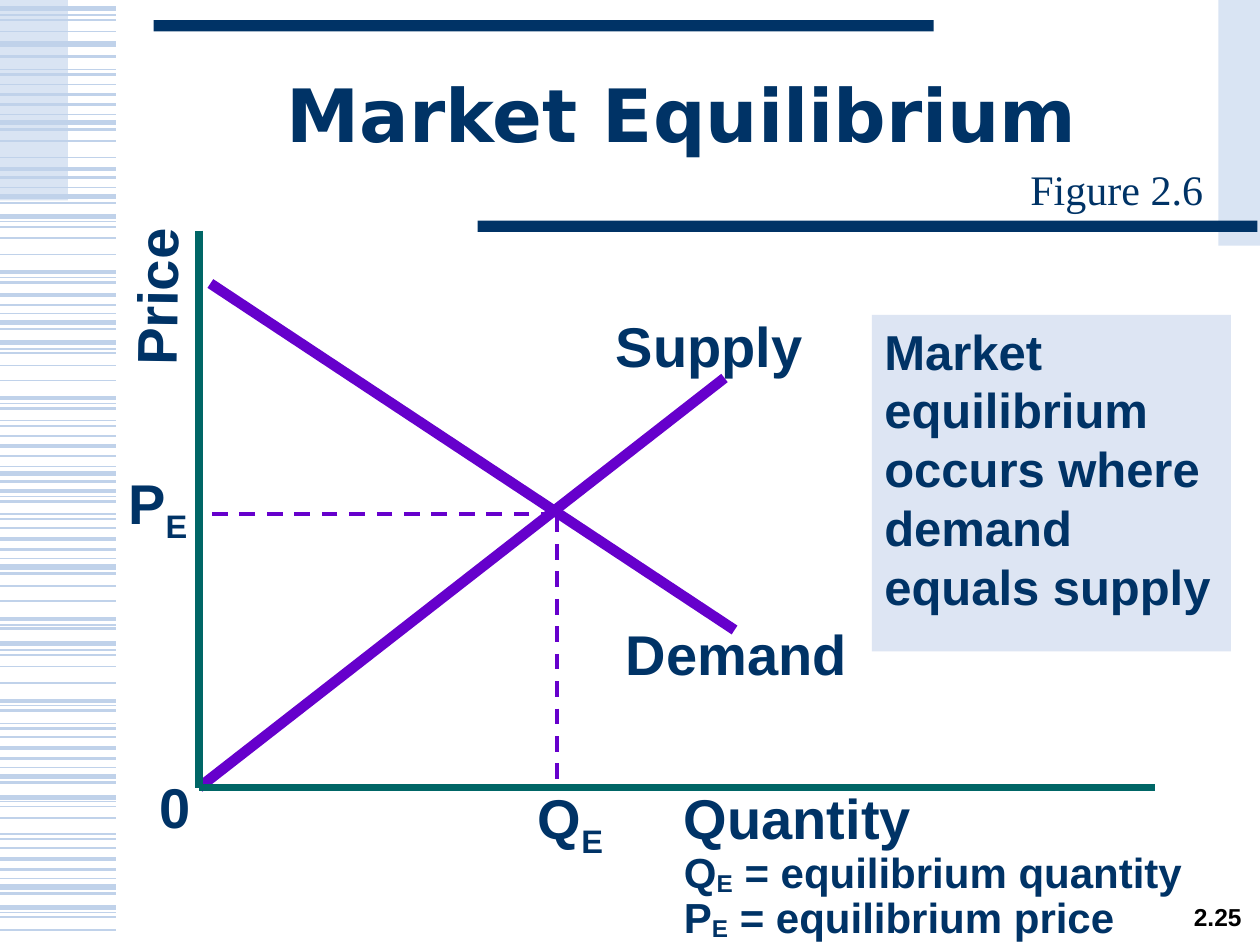
from pptx import Presentation
from pptx.dml.color import RGBColor
from pptx.enum.dml import MSO_LINE
from pptx.enum.shapes import MSO_CONNECTOR, MSO_SHAPE
from pptx.enum.text import MSO_ANCHOR, PP_ALIGN
from pptx.oxml.ns import qn
from pptx.util import Emu, Pt
from lxml.etree import SubElement

PX = 9144  # 100 px to the inch
COLORS = {
    "navy": "003366", "pale": "D9E4F3", "stripe": "C0D2EA", "note": "DDE5F3",
    "curve": "6600CC", "axis": "006666", "black": "000000",
}

BLOCKS = [  # left, top, width, height, colour
    (0, 0, 54, 159, "pale"),
    (122, 16, 619, 9, "navy"),
    (967, 0, 33, 195, "pale"),
    (379, 175, 619, 9, "navy"),
]

STRIPE_LENGTH = 92
STRIPES = {  # line width in points: heights on the slide
    0.75: [12, 55, 91, 149, 176, 220, 249, 277, 320, 334, 370, 394, 408, 443,
           496, 516, 560, 574, 609, 636, 697, 724],
    1: [16, 25, 67, 112, 125, 180, 189, 202, 280, 290, 302, 346, 419, 465, 477,
        520, 529, 542, 585, 640, 649, 662, 673, 728, 738],
    1.5: [45, 59, 83, 103, 141, 161, 224, 242, 261, 324, 338, 362, 382, 398,
          412, 436, 455, 499, 564, 578, 602, 621, 666, 690, 709],
    2.25: [75, 134, 216, 234, 316, 354, 390, 428, 491, 556, 594, 682],
    3: [7, 35, 97, 156, 172, 256, 272, 376, 450, 511, 616, 633, 704, 720],
}

ORIGIN = (158, 625)
GRAPH_LINES = [  # start, end, colour, width in points, dashed
    (ORIGIN, (575, 300), "curve", 6, False),
    ((167, 225), (583, 500), "curve", 6, False),
    ((442, 408), (158, 408), "curve", 2.25, True),
    ((442, 410), (442, 625), "curve", 2.25, True),
    ((158, 183), ORIGIN, "axis", 4.5, False),
    (ORIGIN, (917, 625), "axis", 4.5, False),
]

# Each paragraph is a list of (text, baseline shift in percent)
LABELS = [  # box, paragraphs, size, options
    ((125, 33, 832, 125), [[("Market Equilibrium", 0)]], 42,
     dict(font="DejaVu Sans", align=PP_ALIGN.CENTER, anchor=MSO_ANCHOR.MIDDLE, spacing=0.85)),
    ((808, 125, 167, 50), [[("Figure 2.6", 0)]], 24,
     dict(font="Times New Roman", bold=False)),
    ((933, 717, 67, 27), [[("2.25", 0)]], 14,
     dict(color="black", align=PP_ALIGN.CENTER, anchor=MSO_ANCHOR.MIDDLE,
          spacing=0.7, wrap=False)),
    ((40, 185, 167, 63), [[("Price", 0)]], 32, dict(rotation=270.8)),
    ((117, 608, 33, 63), [[("0", 0)]], 32, {}),
    ((417, 617, 75, 63), [[("Q", 0), ("E", -25)]], 32, {}),
    ((92, 367, 75, 63), [[("P", 0), ("E", -25)]], 32, {}),
    ((487, 487, 196, 63), [[("Demand", 0)]], 32, dict(wrap=False)),
    ((479, 242, 168, 63), [[("Supply", 0)]], 32, dict(wrap=False)),
]
QUANTITY_BOX = (533, 617, 467, 136)
QUANTITY_TEXT = [
    [("Quantity", 0)],
    [("Q", 0), ("E", -10), (" = equilibrium quantity", 0)],
    [("P", 0), ("E", -10), (" = equilibrium price", 0)],
]
NOTE_BOX = (692, 250, 285, 267)
NOTE_TEXT = [[("Market equilibrium occurs where", 0)], [("demand equals supply", 0)]]


def rgb(name):
    return RGBColor.from_string(COLORS[name])


def emu(lengths):
    return [Emu(length * PX) for length in lengths]


def add_block(shapes, box, color):
    block = shapes.add_shape(MSO_SHAPE.RECTANGLE, *emu(box))
    block.shadow.inherit = False
    block.fill.solid()
    block.fill.fore_color.rgb = rgb(color)
    block.line.fill.background()
    return block


def add_line(shapes, start, end, color, width, dashed=False):
    line = shapes.add_connector(MSO_CONNECTOR.STRAIGHT, *emu(start + end))
    line.line.color.rgb = rgb(color)
    line.line.width = Pt(width)
    if dashed:
        line.line.dash_style = MSO_LINE.DASH
    SubElement(line._element.spPr, qn("a:effectLst"))


def write(shape, paragraphs, size, font="Arial", bold=True, color="navy",
          align=PP_ALIGN.LEFT, anchor=MSO_ANCHOR.TOP, spacing=None, wrap=True, rotation=0):
    shape.rotation = rotation
    frame = shape.text_frame
    frame.word_wrap = wrap
    frame.vertical_anchor = anchor
    for index, parts in enumerate(paragraphs):
        paragraph = frame.add_paragraph() if index else frame.paragraphs[0]
        paragraph.alignment = align
        paragraph.line_spacing = spacing
        for text, shift in parts:
            run = paragraph.add_run()
            run.text = text
            run.font.name = font
            run.font.size = Pt(size)
            run.font.bold = bold
            run.font.color.rgb = rgb(color)
            if shift:
                run._r.get_or_add_rPr().set("baseline", str(shift * 1000))


def main():
    presentation = Presentation()
    presentation.slide_width, presentation.slide_height = emu((1000, 750))
    slide = presentation.slides.add_slide(presentation.slide_layouts[6])
    shapes = slide.shapes

    for *box, color in BLOCKS:
        add_block(shapes, box, color)
    stripes = shapes.add_group_shape().shapes
    for width, heights in STRIPES.items():
        for y in heights:
            add_line(stripes, (0, y), (STRIPE_LENGTH, y), "stripe", width)

    for graph_line in GRAPH_LINES:
        add_line(shapes, *graph_line)
    for box, paragraphs, size, options in LABELS:
        write(shapes.add_textbox(*emu(box)), paragraphs, size, **options)

    quantity = shapes.add_textbox(*emu(QUANTITY_BOX))
    write(quantity, QUANTITY_TEXT, 24)
    heading, *definitions = quantity.text_frame.paragraphs
    heading.runs[0].font.size = Pt(32)
    for paragraph in definitions:
        paragraph.line_spacing = 0.75
        paragraph.space_before = Pt(4)

    write(add_block(shapes, NOTE_BOX, "note"), NOTE_TEXT, 28)
    presentation.save("out.pptx")


if __name__ == "__main__":
    main()
